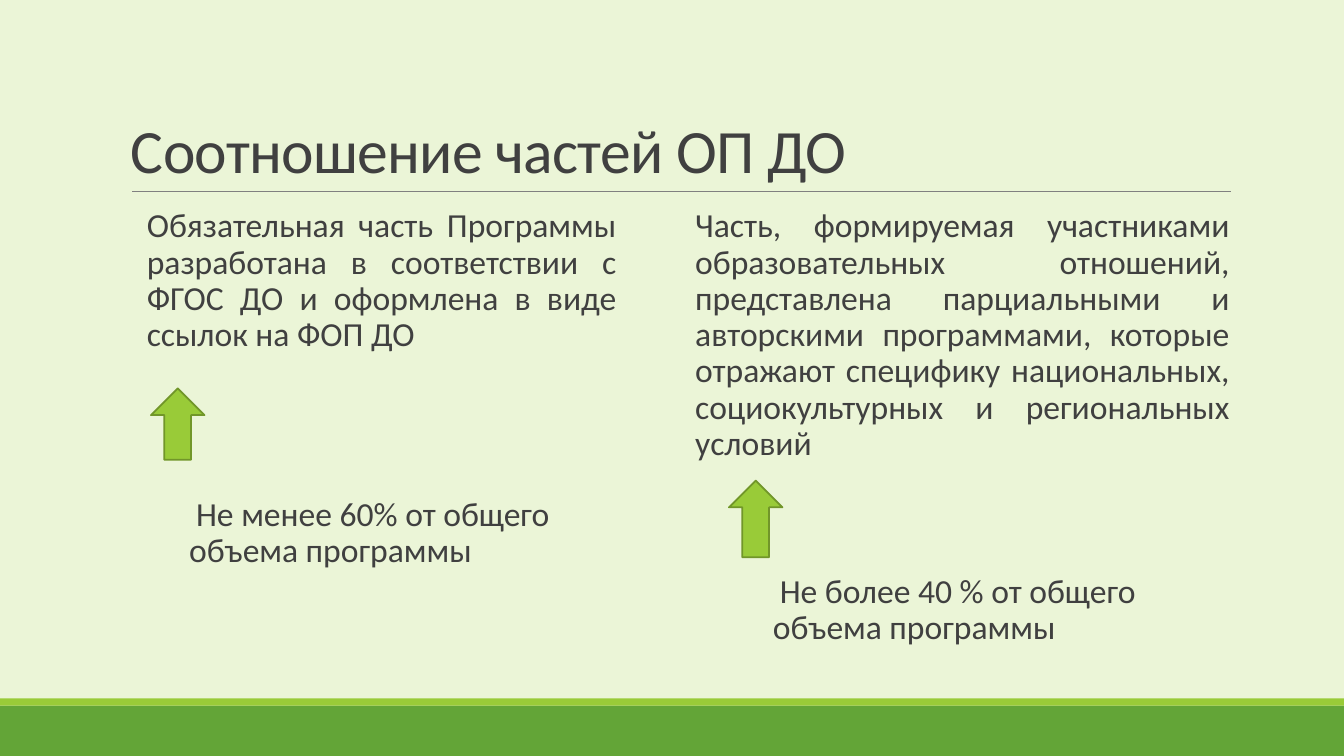
from dataclasses import dataclass

from pptx import Presentation
from pptx import util as u
from pptx.dml.color import RGBColor
from pptx.enum import shapes, text
from pptx.oxml.ns import qn


@dataclass(frozen=True)
class Theme:
    background: str = "EBF5D7"
    band: str = "63A537"
    accent: str = "99CB38"
    arrow_line: str = "719629"
    rule: str = "808080"
    ink: str = "404040"
    font: str = "Calibri"
    title_size: int = 44
    body_size: int = 24


THEME = Theme()
WIDTH, HEIGHT = 33.87, 19.05
LEFT_ALIGNED = text.PP_ALIGN.LEFT
JUSTIFIED = text.PP_ALIGN.JUSTIFY


def colour(value):
    return RGBColor.from_string(value)


def lengths(box):
    return [u.Cm(value) for value in box]


def write(frame, words, size=THEME.body_size, align=LEFT_ALIGNED, line_spacing=0.9,
          before=12, after=2, side_inset=0, anchor=text.MSO_ANCHOR.TOP, tracking=None):
    frame.word_wrap = True
    frame.auto_size = text.MSO_AUTO_SIZE.NONE
    frame.vertical_anchor = anchor
    frame.margin_left = frame.margin_right = u.Cm(side_inset)
    frame.margin_top = frame.margin_bottom = u.Cm(0.13)
    paragraph = frame.paragraphs[0]
    paragraph.alignment = align
    paragraph.line_spacing = line_spacing
    paragraph.space_before, paragraph.space_after = u.Pt(before), u.Pt(after)
    run = paragraph.add_run()
    run.text = words
    run.font.name, run.font.size = THEME.font, u.Pt(size)
    run.font.color.rgb = colour(THEME.ink)
    if tracking is not None:
        run.font._element.set("spc", str(round(tracking * 100)))
    return paragraph


def indent(paragraph, distance=0.25):
    """Set a hanging indent with a blank bullet."""
    properties = paragraph._p.get_or_add_pPr()
    properties.set("marL", str(u.Cm(distance)))
    properties.set("indent", str(-u.Cm(distance)))
    bullet = properties.makeelement(qn("a:buChar"), {"char": " "})
    properties.append(bullet)


class SlideBuilder:
    def __init__(self, presentation, theme):
        self.theme = theme
        self.slide = presentation.slides.add_slide(presentation.slide_layouts[3])
        fill = self.slide.background.fill
        fill.solid()
        fill.fore_color.rgb = colour(theme.background)

    def place(self, index, box):
        shape = self.slide.placeholders[index]
        shape.left, shape.top, shape.width, shape.height = lengths(box)
        return shape.text_frame

    def title(self, words, box):
        write(self.place(0, box), words, size=self.theme.title_size, line_spacing=0.85,
              before=0, after=0, side_inset=0.25, anchor=text.MSO_ANCHOR.BOTTOM,
              tracking=-0.5)

    def body(self, index, words, box):
        indent(write(self.place(index, box), words, align=JUSTIFIED))

    def note(self, words, box):
        indent(write(self.slide.shapes.add_textbox(*lengths(box)).text_frame, words))

    def shape(self, kind, box, fill):
        shape = self.slide.shapes.add_shape(kind, *lengths(box))
        shape.shadow.inherit = False
        shape.fill.solid()
        shape.fill.fore_color.rgb = colour(fill)
        return shape

    def band(self, top, height, fill):
        shape = self.shape(shapes.MSO_SHAPE.RECTANGLE, (0, top, WIDTH, height), fill)
        shape.line.fill.background()

    def up_arrow(self, left, top, length):
        shape = self.shape(shapes.MSO_SHAPE.RIGHT_ARROW, (left, top, length, 1.35),
                           self.theme.accent)
        shape.rotation = 270
        shape.line.color.rgb = colour(self.theme.arrow_line)
        shape.line.width = u.Pt(1.25)

    def rule(self, left, right, top):
        connector = self.slide.shapes.add_connector(
            shapes.MSO_CONNECTOR.STRAIGHT, *lengths((left, top, right, top)))
        connector.line.color.rgb = colour(self.theme.rule)
        connector.line.width = u.Pt(0.5)
        properties = connector._element.spPr
        properties.append(properties.makeelement(qn("a:effectLst"), {}))


def main():
    presentation = Presentation()
    presentation.slide_width, presentation.slide_height = u.Cm(WIDTH), u.Cm(HEIGHT)
    builder = SlideBuilder(presentation, THEME)

    builder.band(17.78, 1.27, THEME.band)
    builder.band(17.6, 0.18, THEME.accent)
    builder.rule(3.33, 31.01, 4.83)
    builder.title("Соотношение частей ОП ДО", (3.05, 0.79, 27.94, 4.04))

    builder.body(1, "Обязательная часть Программы разработана в соответствии с ФГОС ДО "
                    "и оформлена в виде ссылок на ФОП ДО", (3.45, 5.13, 12.09, 4.65))
    builder.up_arrow(3.58, 10.01, 1.8)
    builder.note("Не менее 60% от общего объема программы", (4.52, 12.4, 10.59, 2.4))

    builder.body(2, "Часть, формируемая участниками образовательных отношений, "
                    "представлена парциальными и авторскими программами, которые отражают "
                    "специфику национальных, социокультурных и региональных условий",
                 (17.27, 5.13, 13.72, 6.68))
    builder.up_arrow(18.08, 12.4, 1.93)
    builder.note("Не более 40 % от общего объема программы", (19.23, 14.35, 10.59, 2.4))

    presentation.save("out.pptx")


if __name__ == "__main__":
    main()
